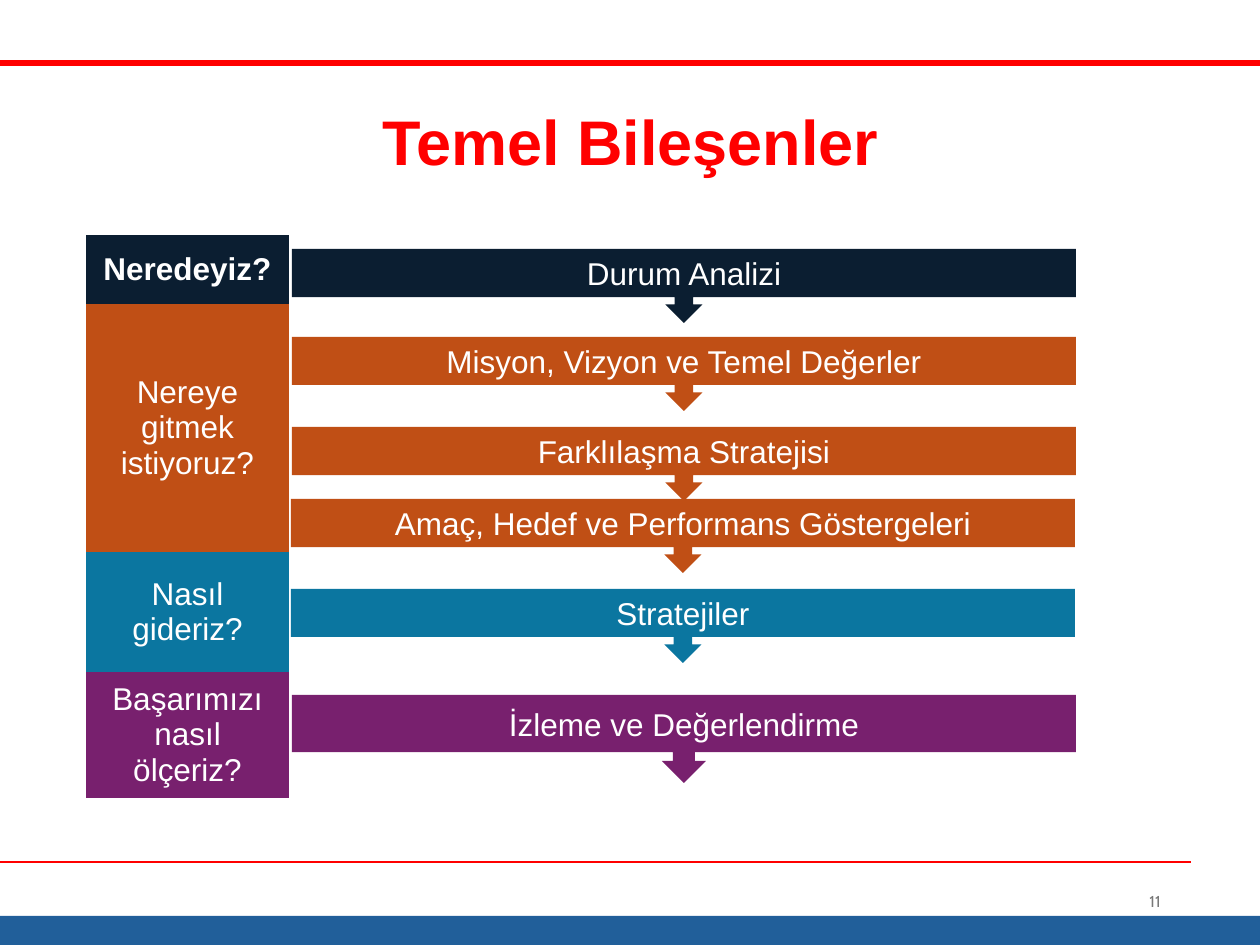
import lxml.etree
import pptx
import pptx.dml.color
import pptx.enum.shapes
import pptx.enum.text
import pptx.oxml.ns
import pptx.util

RGBColor = pptx.dml.color.RGBColor
Align = pptx.enum.text.PP_ALIGN
Anchor = pptx.enum.text.MSO_ANCHOR
Shape = pptx.enum.shapes.MSO_SHAPE

WHITE = RGBColor(0xFF, 0xFF, 0xFF)
RED = RGBColor(0xFF, 0x00, 0x00)
GRAY = RGBColor(0x79, 0x79, 0x79)
BLUE = RGBColor(0x21, 0x5F, 0x9A)
NAVY = RGBColor(0x0B, 0x1E, 0x31)
ORANGE = RGBColor(0xC0, 0x4F, 0x15)
TEAL = RGBColor(0x0B, 0x76, 0xA0)
PURPLE = RGBColor(0x78, 0x20, 0x6E)

PX_PER_INCH = 126
PAGE_WIDTH, PAGE_HEIGHT = 1260, 945

TITLE = "Temel Bileşenler"
PAGE_NUMBER = "11"

# text, row height, fill, bold
QUESTIONS = [
    ("Neredeyiz?", 69, NAVY, True),
    ("Nereye gitmek istiyoruz?", 248, ORANGE, False),
    ("Nasıl gideriz?", 120, TEAL, False),
    ("Başarımızı nasıl ölçeriz?", 98, PURPLE, False),
]
# text, left, top, height, fill
STEPS = [
    ("Durum Analizi", 292, 249, 74, NAVY),
    ("Misyon, Vizyon ve Temel Değerler", 292, 337, 74, ORANGE),
    ("Farklılaşma Stratejisi", 292, 427, 74, ORANGE),
    ("Amaç, Hedef ve Performans Göstergeleri", 291, 499, 74, ORANGE),
    ("Stratejiler", 291, 589, 74, TEAL),
    ("İzleme ve Değerlendirme", 292, 695, 88, PURPLE),
]
STEP_WIDTH = 784
# y, right end, weight in points
RULES = [(63, PAGE_WIDTH, 3.5), (862, 1191, 1.5)]


def px(*lengths):
    return [pptx.util.Emu(round(length * 914400 / PX_PER_INCH)) for length in lengths]


def write(frame, text, size, color, align=Align.CENTER, font="Arial", bold=False):
    frame.word_wrap = True
    para = frame.paragraphs[0]
    para.text = text
    para.alignment = align
    para.font.name = font
    para.font.size = pptx.util.Pt(size)
    para.font.bold = bold
    para.font.color.rgb = color


def add_filled(page, kind, left, top, width, height, color):
    shape = page.shapes.add_shape(kind, *px(left, top, width, height))
    shape.shadow.inherit = False
    shape.fill.solid()
    shape.fill.fore_color.rgb = color
    shape.line.fill.background()
    return shape


def add_rule(page, y, right, weight):
    rule = page.shapes.add_connector(
        pptx.enum.shapes.MSO_CONNECTOR.STRAIGHT, *px(0, y, right, y))
    rule.line.color.rgb = RED
    rule.line.width = pptx.util.Pt(weight)
    properties = rule._element.spPr
    lxml.etree.SubElement(properties, pptx.oxml.ns.qn("a:effectLst"))


def add_questions(page):
    height = sum(row[1] for row in QUESTIONS)
    table = page.shapes.add_table(len(QUESTIONS), 1, *px(86, 235, 203, height)).table
    table.first_row = table.horz_banding = False
    for index, (text, row_height, color, bold) in enumerate(QUESTIONS):
        table.rows[index].height = px(row_height)[0]
        cell = table.cell(index, 0)
        cell.fill.solid()
        cell.fill.fore_color.rgb = color
        cell.vertical_anchor = Anchor.MIDDLE
        write(cell.text_frame, text, 18, WHITE, bold=bold)
        # No borders between the coloured cells
        for position, side in enumerate(("lnL", "lnR", "lnT", "lnB")):
            border = lxml.etree.Element(pptx.oxml.ns.qn("a:" + side), w="0")
            lxml.etree.SubElement(border, pptx.oxml.ns.qn("a:noFill"))
            cell._tc.tcPr.insert(position, border)


def main():
    deck = pptx.Presentation()
    deck.slide_width, deck.slide_height = px(PAGE_WIDTH, PAGE_HEIGHT)
    page = deck.slides.add_slide(deck.slide_layouts[6])

    add_filled(page, Shape.RECTANGLE, 0, 916, PAGE_WIDTH, 29, BLUE)
    for rule in RULES:
        add_rule(page, *rule)

    number = page.shapes.add_textbox(*px(890, 876, 283, 50)).text_frame
    number.vertical_anchor = Anchor.MIDDLE
    write(number, PAGE_NUMBER, 9, GRAY, Align.RIGHT, "Cabin")

    title = page.shapes.add_textbox(*px(257, 91, 747, 301)).text_frame
    title.margin_top = px(12)[0]
    write(title, TITLE, 36, RED, bold=True)

    add_questions(page)
    for text, left, top, height, color in STEPS:
        step = add_filled(page, Shape.DOWN_ARROW_CALLOUT, left, top, STEP_WIDTH, height, color)
        step.text_frame.vertical_anchor = Anchor.MIDDLE
        write(step.text_frame, text, 18, WHITE)

    deck.save("out.pptx")


if __name__ == "__main__":
    main()
